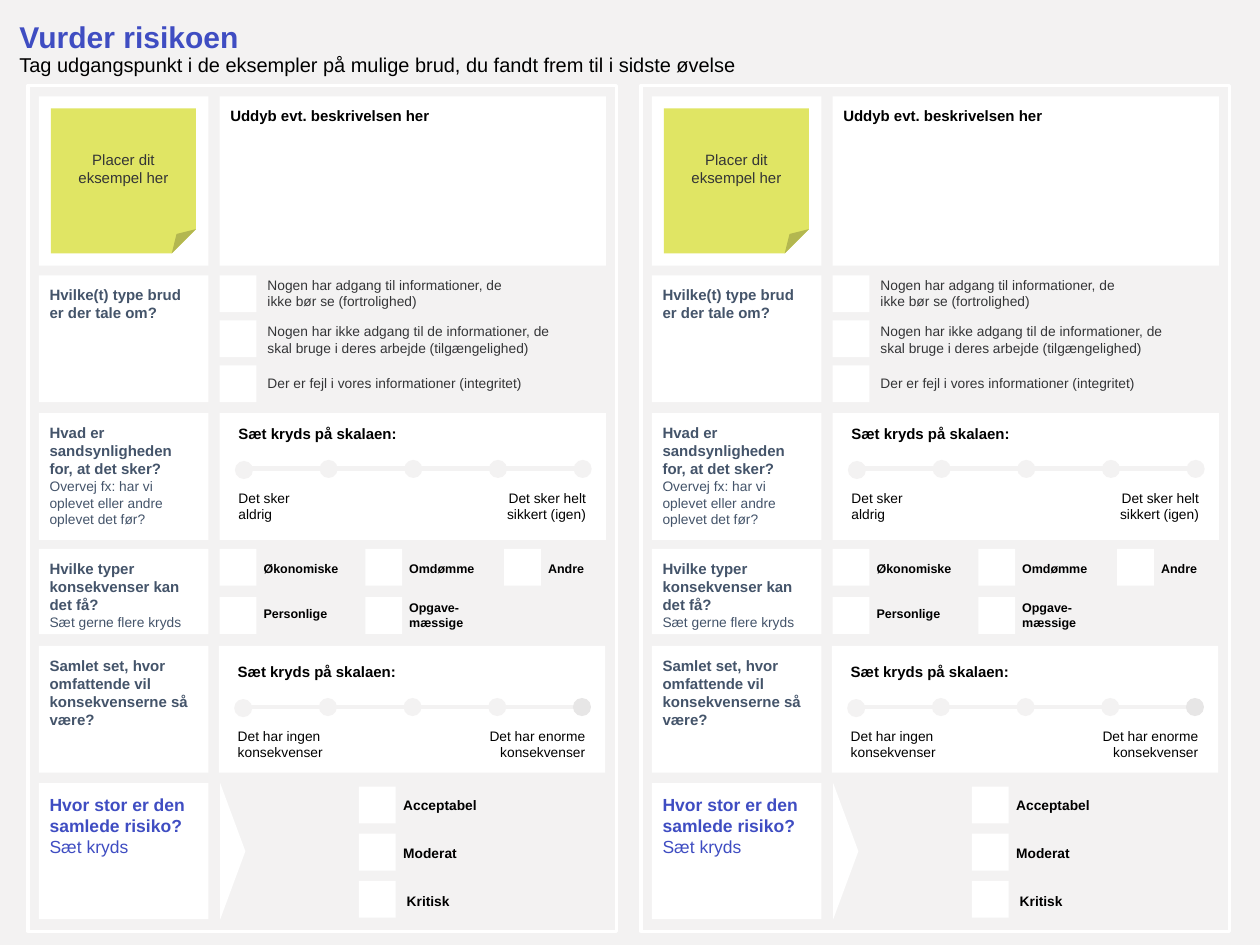
from lxml import etree
from pptx import Presentation
from pptx.dml import color
from pptx.enum import shapes, text
from pptx.oxml import ns
from pptx.util import Cm, Pt

KIND = shapes.MSO_SHAPE
ALIGN = text.PP_ALIGN
WHITE, GREY, BLACK = "FFFFFF", "F3F2F2", "000000"
BLUE, SLATE, INK = "3F4DC2", "44546A", "343537"
CHECK = 1.04
SIDE, MAIN, GAP = 4.78, 10.9, 5.1


def paint(form, shade):
    """Give a fill or font colour a solid hex shade."""
    if hasattr(form, "solid"):
        form.solid()
        form = form.fore_color
    form.rgb = color.RGBColor.from_string(shade)


def add_run(para, words, size, shade, bold=False):
    """Add one formatted run to a paragraph."""
    run = para.add_run()
    run.text = words
    run.font.name = "Arial"
    run.font.size = Pt(size)
    run.font.bold = bold
    paint(run.font.color, shade)


def write(shape, runs, pads=(0, 0, 0, 0), align=ALIGN.LEFT, anchor=text.MSO_ANCHOR.TOP):
    """Fill a shape with one paragraph for each run."""
    frame = shape.text_frame
    frame.word_wrap = True
    frame.vertical_anchor = anchor
    frame.margin_left, frame.margin_top, frame.margin_right, frame.margin_bottom = map(Cm, pads)
    for index, run in enumerate(runs):
        para = frame.add_paragraph() if index else frame.paragraphs[0]
        para.alignment = align
        add_run(para, *run)


def draw(slide, kind, x, y, w, h, fill=WHITE):
    """Add a filled shape with no outline."""
    shape = slide.shapes.add_shape(kind, Cm(x), Cm(y), Cm(w), Cm(h))
    shape.shadow.inherit = False
    shape.line.fill.background()
    paint(shape.fill, fill)
    return shape


def label(slide, x, y, w, h, run, align=ALIGN.LEFT):
    """Add a text box that grows with its text."""
    box = slide.shapes.add_textbox(Cm(x), Cm(y), Cm(w), Cm(h))
    write(box, [run], align=align)
    box.text_frame.auto_size = text.MSO_AUTO_SIZE.SHAPE_TO_FIT_TEXT


def card(slide, x, y, w, h, *runs):
    """Add a white card with padded text."""
    write(draw(slide, KIND.RECTANGLE, x, y, w, h), runs, (0.3, 0.3, 0.3, 0.5))


def tick(slide, x, y):
    """Add an empty check box."""
    draw(slide, KIND.RECTANGLE, x, y, CHECK, CHECK)


def example(slide, x, y, h):
    """Place the sticky note and the description field."""
    draw(slide, KIND.RECTANGLE, x, y, SIDE, h)
    note = draw(slide, KIND.FOLDED_CORNER, x + 0.34, y + 0.34, 4.09, 4.09, "E0E564")
    write(note, [("Placer dit eksempel her", 12, "343536")], (0.5, 0.5, 0.5, 0.5),
          ALIGN.CENTER, text.MSO_ANCHOR.MIDDLE)
    card(slide, x + GAP, y, MAIN, h, ("Uddyb evt. beskrivelsen her", 12, BLACK, True))


def breach(slide, x, y, h):
    """Place the question about the type of breach."""
    card(slide, x, y, SIDE, h, ("Hvilke(t) type brud er der tale om?", 12, SLATE, True))
    rows = [
        ("Nogen har adgang til informationer, de ikke bør se (fortrolighed)", 0.03, 6.96, 0.94),
        ("Nogen har ikke adgang til de informationer, de skal bruge i deres arbejde "
         "(tilgængelighed)", 1.35, 8.05, 0.94),
        ("Der er fejl i vores informationer (integritet)", 2.82, 8.26, 0.48),
    ]
    for index, (words, top, wide, tall) in enumerate(rows):
        tick(slide, x + GAP, y + 1.27 * index)
        label(slide, x + GAP + 1.35, y + top, wide, tall, (words, 11, INK))


def scale(slide, x, y, h, low, high, wide, drop=0, last=GREY):
    """Place a five-step scale in a white field."""
    draw(slide, KIND.RECTANGLE, x, y, MAIN, h)
    y += drop
    label(slide, x + 0.53, y + 0.33, 4.57, 0.51, ("Sæt kryds på skalaen:", 12, BLACK, True))
    label(slide, x + 0.53, y + 2.15, wide, 0.94, (low, 11, BLACK))
    label(slide, x + 7.24, y + 2.15, 3.1, 0.94, (high, 11, BLACK), ALIGN.RIGHT)
    track = slide.shapes.add_connector(shapes.MSO_CONNECTOR.STRAIGHT, Cm(x + 0.53),
                                       Cm(y + 1.57), Cm(x + 10.34), Cm(y + 1.57))
    paint(track.line.fill, GREY)
    track.line.width = Pt(3.75)
    etree.SubElement(track._element.spPr, ns.qn("a:effectLst"))
    for step, shade in enumerate([GREY] * 4 + [last]):
        sink = 0 if step else 0.03
        draw(slide, KIND.OVAL, x + 0.43 + 2.39 * step, y + 1.32 + sink, 0.51, 0.51, shade)


def chance(slide, x, y, h):
    """Place the question about likelihood."""
    card(slide, x, y, SIDE, h, ("Hvad er sandsynligheden for, at det sker?", 12, SLATE, True),
         ("Overvej fx: har vi oplevet eller andre oplevet det før?", 11, SLATE))
    scale(slide, x + GAP, y, h, "Det sker aldrig", "Det sker helt sikkert (igen)", 1.8)


def effects(slide, x, y, h):
    """Place the question about types of consequence."""
    card(slide, x, y, SIDE, h, ("Hvilke typer konsekvenser kan det få?", 12, SLATE, True),
         ("Sæt gerne flere kryds", 11, SLATE))
    items = [
        ("Økonomiske", 0, 0, 0.33, 3.02), ("Personlige", 0, 1.36, 1.6, 2.69),
        ("Omdømme", 4.11, 0, 0.33, 2.69), ("Opgave-mæssige", 4.11, 1.36, 1.45, 2.59),
        ("Andre", 8.03, 0, 0.33, 1.14),
    ]
    for words, left, top, base, wide in items:
        tick(slide, x + GAP + left, y + top)
        label(slide, x + GAP + left + 1.24, y + base, wide, 0.43, (words, 10, BLACK, True))


def extent(slide, x, y, h):
    """Place the question about the size of the consequences."""
    card(slide, x, y, SIDE, h,
         ("Samlet set, hvor omfattende vil konsekvenserne så være?", 12, SLATE, True))
    scale(slide, x + GAP - 0.02, y, h, "Det har ingen konsekvenser",
          "Det har enorme konsekvenser", 2.84, 0.15, "E7E6E6")


def risk(slide, x, y, h):
    """Place the overall risk question and its three levels."""
    card(slide, x, y, SIDE, h, ("Hvor stor er den samlede risiko?", 14, BLUE, True),
         ("Sæt kryds", 14, BLUE))
    arrow = draw(slide, KIND.ISOSCELES_TRIANGLE, x + GAP - 1.55, y + 1.57, h, 0.71)
    arrow.rotation = 90
    levels = [("Acceptabel", 5.18, 2.31), ("Moderat", 5.18, 2.31), ("Kritisk", 5.28, 1.47)]
    for index, (words, left, wide) in enumerate(levels):
        tick(slide, x + GAP + 3.93, y + 0.1 + 1.33 * index)
        label(slide, x + GAP + left, y + 0.38 + 1.36 * index, wide, 0.48,
              (words, 11, BLACK, True))


def panel(slide, x, y, w, h):
    """Place one framed assessment form."""
    frame = draw(slide, KIND.RECTANGLE, x, y, w, h)
    frame.fill.background()
    paint(frame.line.fill, WHITE)
    frame.line.width = Pt(2.5)
    rows = [(example, 0.31, 4.78), (breach, 5.36, 3.58), (chance, 9.25, 3.58),
            (effects, 13.08, 2.41), (extent, 15.82, 3.58), (risk, 19.69, 3.84)]
    for place, top, tall in rows:
        place(slide, x + 0.31, y + top, tall)


def heading(slide, x, y, w, h):
    """Place the title with its instruction line."""
    box = slide.shapes.add_textbox(Cm(x), Cm(y), Cm(w), Cm(h))
    write(box, [("Vurder risikoen", 24, BLUE, True)])
    para = box.text_frame.paragraphs[0]
    para.line_spacing = 0.9
    para.add_line_break()
    add_run(para, "Tag udgangspunkt i de eksempler på mulige brud, du fandt frem til "
            "i sidste øvelse", 16, BLACK)


def main():
    """Build and save the slide."""
    deck = Presentation()
    deck.slide_width, deck.slide_height = Cm(35.56), Cm(26.67)
    slide = deck.slides.add_slide(deck.slide_layouts[6])
    paint(slide.background.fill, GREY)
    heading(slide, 0.55, 0.64, 27.18, 2.03)
    for index in range(2):
        panel(slide, 0.79 + 17.3 * index, 2.41, 16.61, 23.88)
    deck.save("out.pptx")


if __name__ == "__main__":
    main()
